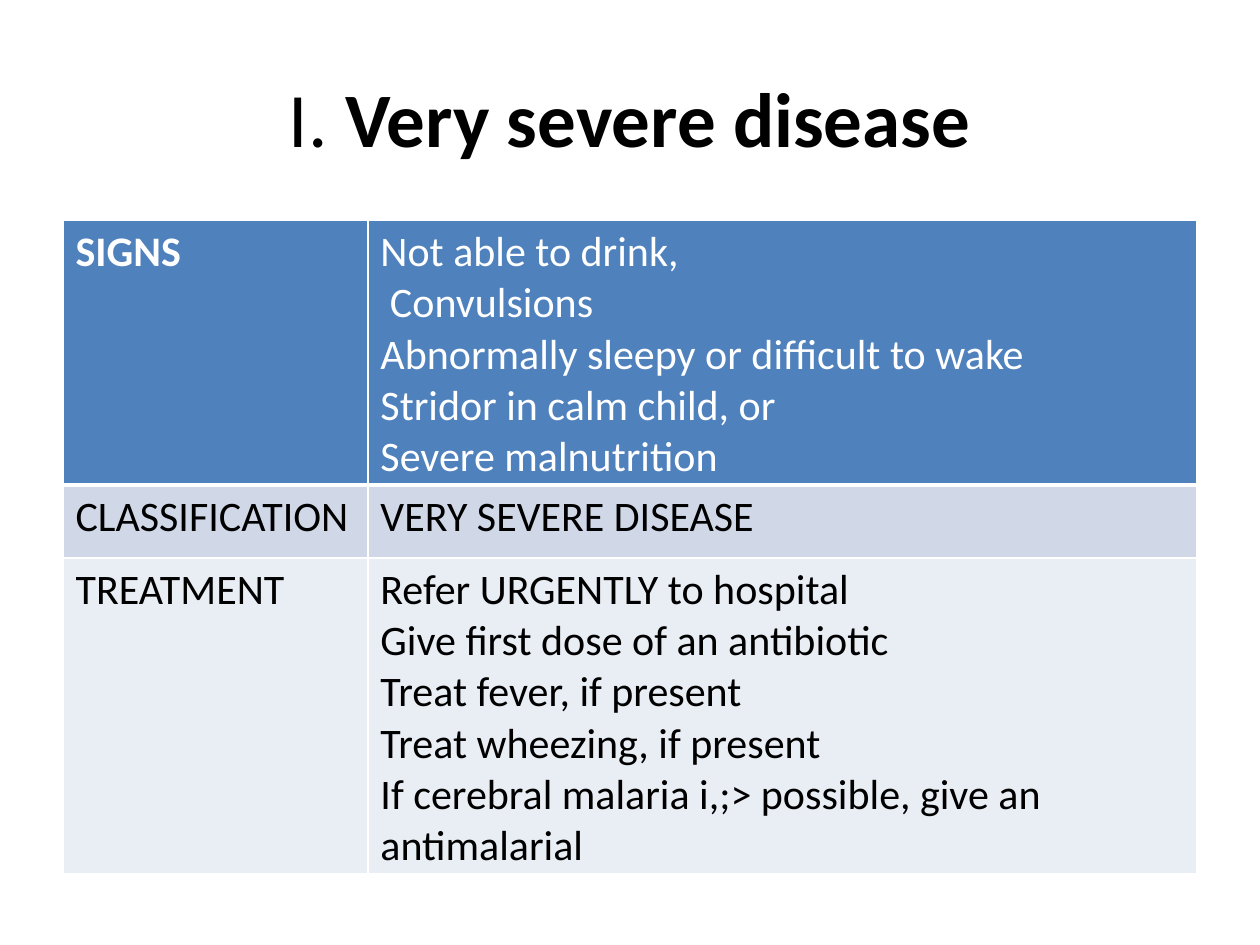
from lxml import etree
from pptx import Presentation, util as u
from pptx.dml.color import RGBColor
from pptx.enum import text
from pptx.oxml import ns

FONT = "Calibri"
COLORS = {
    "black": "000000",
    "white": "FFFFFF",
    "header": "4F81BD",
    "band": "D0D8E8",
    "light": "E9EDF4",
}
COLUMN_WIDTHS = [2.42, 6.58]

# Row height, fill, text colour, label, lines
ROWS = [
    (1.83, "header", "white", "SIGNS", [
        "Not able to drink,",
        " Convulsions",
        "Abnormally sleepy or difficult to wake",
        "Stridor in calm child, or",
        "Severe malnutrition",
    ]),
    (0.58, "band", "black", "CLASSIFICATION", ["VERY SEVERE DISEASE"]),
    (2.29, "light", "black", "TREATMENT", [
        "Refer URGENTLY to hospital",
        "Give first dose of an antibiotic",
        "Treat fever, if present",
        "Treat wheezing, if present",
        "If cerebral malaria i,;> possible, give an antimalarial",
    ]),
]


def color(name):
    return RGBColor.from_string(COLORS[name])


def add_run(paragraph, content, size=24, bold=False, text_color="black"):
    run = paragraph.add_run()
    run.text = content
    run.font.name = FONT
    run.font.size = u.Pt(size)
    run.font.bold = bold
    run.font.color.rgb = color(text_color)


def add_title(slide):
    box = slide.shapes.add_textbox(u.Inches(0.5), u.Inches(0.3), u.Inches(9), u.Inches(1.25))
    frame = box.text_frame
    frame.word_wrap = True
    frame.vertical_anchor = text.MSO_ANCHOR.MIDDLE
    paragraph = frame.paragraphs[0]
    paragraph.alignment = text.PP_ALIGN.CENTER
    add_run(paragraph, "I. ", size=44)
    add_run(paragraph, "Very severe disease", size=44, bold=True)


def set_borders(cell, top=1, bottom=1):
    properties = cell._tc.get_or_add_tcPr()
    for side, width in (("L", 1), ("R", 1), ("T", top), ("B", bottom)):
        line = etree.SubElement(properties, ns.qn(f"a:ln{side}"), w=str(u.Pt(width)))
        solid = etree.SubElement(line, ns.qn("a:solidFill"))
        etree.SubElement(solid, ns.qn("a:srgbClr"), val=COLORS["white"])


def fill_cell(cell, lines, fill, **text_format):
    cell.fill.solid()
    cell.fill.fore_color.rgb = color(fill)
    frame = cell.text_frame
    for index, line in enumerate(lines):
        paragraph = frame.add_paragraph() if index else frame.paragraphs[0]
        add_run(paragraph, line, **text_format)


def add_disease_table(slide):
    total_height = sum(row[0] for row in ROWS)
    table = slide.shapes.add_table(
        len(ROWS), len(COLUMN_WIDTHS),
        u.Inches(0.5), u.Inches(1.75), u.Inches(9), u.Inches(total_height),
    ).table
    for column, width in zip(table.columns, COLUMN_WIDTHS):
        column.width = u.Inches(width)

    for index, (height, fill, text_color, label, lines) in enumerate(ROWS):
        table.rows[index].height = u.Inches(height)
        # A thick rule separates the header from the body
        top = 3 if index == 1 else 1
        bottom = 3 if index == 0 else 1
        for column, content in enumerate(([label], lines)):
            cell = table.cell(index, column)
            set_borders(cell, top=top, bottom=bottom)
            # Only the header label is bold
            bold = index == 0 and column == 0
            fill_cell(cell, content, fill, text_color=text_color, bold=bold)


def main():
    presentation = Presentation()
    presentation.slide_width = u.Inches(10)
    presentation.slide_height = u.Inches(7.5)
    slide = presentation.slides.add_slide(presentation.slide_layouts[6])
    add_title(slide)
    add_disease_table(slide)
    presentation.save("out.pptx")


if __name__ == "__main__":
    main()
